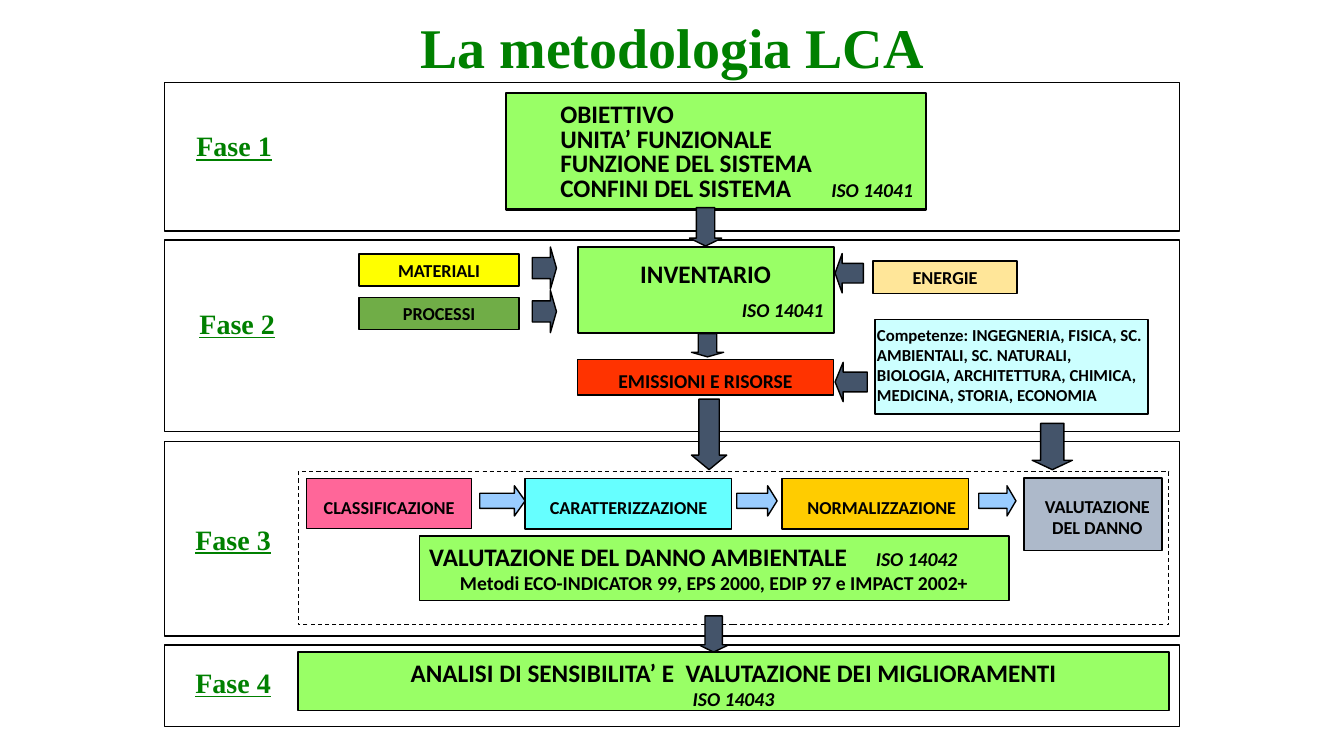
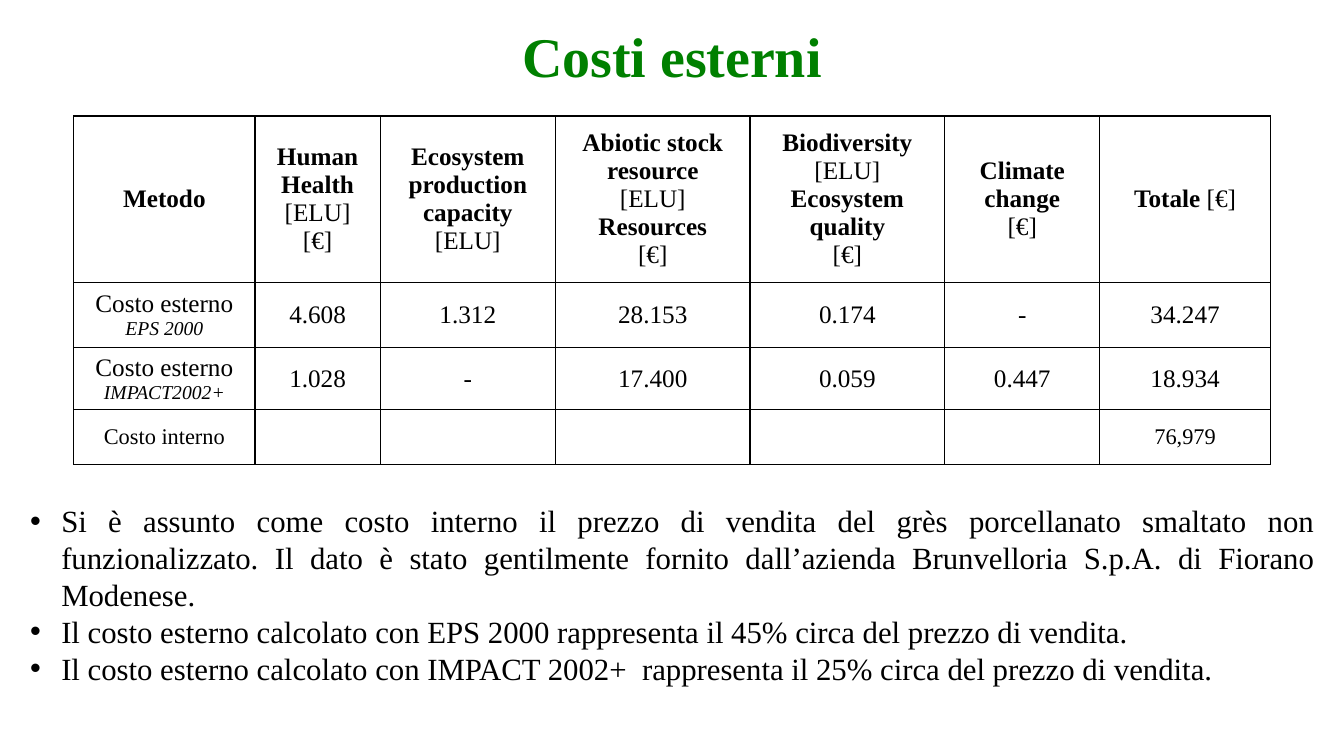
from lxml import etree
from pptx import Presentation
from pptx.dml.color import RGBColor
from pptx.enum import dml, shapes, text
from pptx.oxml import ns
from pptx.util import Pt

SERIF, SANS = "Times New Roman", "Calibri"
GREEN, LIME, SLATE, SKY, BLACK, WHITE = "008000", "99FF66", "44546A", "99CCFF", "000000", "FFFFFF"
ALIGN = {"l": text.PP_ALIGN.LEFT, "c": text.PP_ALIGN.CENTER,
         "r": text.PP_ALIGN.RIGHT, "j": text.PP_ALIGN.JUSTIFY}
KIND = shapes.MSO_SHAPE
TOP, MIDDLE = text.MSO_ANCHOR.TOP, text.MSO_ANCHOR.MIDDLE
colour = RGBColor.from_string


def write(frame, paragraphs, font, hex_colour=BLACK, before=0, spacing=None):
    """Each paragraph is (alignment, [(text, size, style letters from b, i, u)])."""
    frame.word_wrap = True
    for index, (align, runs) in enumerate(paragraphs):
        paragraph = frame.add_paragraph() if index else frame.paragraphs[0]
        paragraph.alignment = ALIGN[align]
        paragraph.space_before = Pt(before if index else 0)
        if spacing:
            paragraph.line_spacing = spacing
        for words, size, style in runs:
            run = paragraph.add_run()
            run.text = words
            run.font.name, run.font.size = font, Pt(size)
            run.font.bold, run.font.italic = "b" in style, "i" in style
            run.font.underline = "u" in style
            run.font.color.rgb = colour(hex_colour)


def draw(slide, kind, place, fill, line_width=1.0):
    shape = slide.shapes.add_shape(kind, *[Pt(length) for length in place])
    shape.shadow.inherit = False
    if fill:
        shape.fill.solid()
        shape.fill.fore_color.rgb = colour(fill)
    else:
        shape.fill.background()
    shape.line.color.rgb = colour(BLACK)
    shape.line.width = Pt(line_width)
    return shape


presentation = Presentation()
presentation.slide_width, presentation.slide_height = Pt(960), Pt(540)

# Slides and their titles
slides = []
for title, place in (("La metodologia LCA", (88.5, 5.8, 783, 61)),
                     ("Costi esterni", (66, 14.4, 828, 55.4))):
    slide = presentation.slides.add_slide(presentation.slide_layouts[6])
    frame = slide.shapes.add_textbox(*[Pt(length) for length in place]).text_frame
    frame.vertical_anchor = MIDDLE
    write(frame, [("c", [(title, 40, "b")])], SERIF, GREEN, spacing=0.9)
    slides.append(slide)
method_slide, cost_slide = slides

# Slide 1: phase frames and labels
phases = [(59, 106, 133.2, 88.6), (171.4, 136.8, 135.4, 215.3),
          (315.4, 139, 132.5, 369.4), (460.8, 58.3, 132.5, 471.6)]
for number, (top, height, label_left, label_top) in enumerate(phases, 1):
    draw(method_slide, KIND.RECTANGLE, (117.4, top, 725, height), WHITE)
    label = method_slide.shapes.add_textbox(Pt(label_left), Pt(label_top), Pt(80), Pt(31.7))
    write(label.text_frame, [("l", [(f"Fase {number}", 20, "bu")])], SERIF, GREEN)

assessment = draw(method_slide, KIND.RECTANGLE, (213, 337, 622, 109.4), None, 0.75)
assessment.line.dash_style = dml.MSO_LINE.DASH

# Slide 1: boxes as place, fill, line width, insets, anchor, space before, line spacing,
# tab stop, paragraphs
PLAIN, STEP = (7.2, 3.6, 7.2, 3.6), (1.4, 12.2, 1.4, 3.6)
SHIFTED = (7.4, 12.2, 1.4, 3.6)
boxes = [
    ((361.4, 66.2, 300.2, 83.5), LIME, 1.5, (38.9, 15, 1.4, 3.6), TOP, 9, 0.4, 193.6,
     [("l", [("OBIETTIVO", 18, "b")]),
      ("l", [("UNITA’ FUNZIONALE", 18, "b")]),
      ("l", [("FUNZIONE DEL SISTEMA", 18, "b")]),
      ("l", [("CONFINI DEL SISTEMA\t", 18, "b"), ("ISO 14041", 14, "bi")])]),
    ((412.6, 176.4, 182.9, 61.2), LIME, 1.5, PLAIN, MIDDLE, 7, None, None,
     [("c", [("INVENTARIO", 18, "b")]), ("r", [("ISO 14041", 14, "bi")])]),
    ((412.6, 257, 182.9, 25.2), "FF3300", 1, (7.2, 6.5, 7.2, 3.6), TOP, 0, None, None,
     [("c", [("EMISSIONI E RISORSE", 14, "b")])]),
    ((256.3, 181.4, 114.5, 23), "FFFF00", 1, PLAIN, TOP, 0, None, None,
     [("c", [("MATERIALI", 13, "b")])]),
    ((256.3, 212.4, 114.5, 23), "70AD47", 1, PLAIN, TOP, 0, None, None,
     [("c", [("PROCESSI", 13, "b")])]),
    ((623.5, 186.5, 103, 23), "FFE699", 1, PLAIN, TOP, 0, None, None,
     [("c", [("ENERGIE", 13, "b")])]),
    ((625, 228.2, 195.1, 67.7), "CCFFFF", 1, (1.4, 3.6, 1.4, 0.7), TOP, 0, None, None,
     [("l", [("Competenze: INGEGNERIA, FISICA, SC. AMBIENTALI, SC. NATURALI, BIOLOGIA, "
              "ARCHITETTURA, CHIMICA, MEDICINA, STORIA, ECONOMIA", 12, "b")])]),
    ((218.9, 342, 118, 35.6), "FF6699", 1, STEP, TOP, 0, None, None,
     [("c", [("CLASSIFICAZIONE", 13, "b")])]),
    ((375.1, 342, 147.6, 36), "66FFFF", 1, STEP, TOP, 0, None, None,
     [("c", [("CARATTERIZZAZIONE", 13, "b")])]),
    ((558.7, 342, 133.2, 36), "FFCC00", 1, (10.3, 12.2, 1.4, 3.6), TOP, 0, None, None,
     [("c", [("NORMALIZZAZIONE", 13, "b")])]),
    ((731.5, 341.3, 98.6, 51.8), "ADB9CA", 1, SHIFTED, TOP, 0, None, None,
     [("c", [("VALUTAZIONE", 13, "b")]), ("c", [("DEL DANNO", 13, "b")])]),
    ((299.5, 383, 421.2, 46.1), LIME, 1, PLAIN, TOP, 0, None, 319,
     [("l", [("VALUTAZIONE DEL DANNO AMBIENTALE\t", 18, "b"), ("ISO 14042", 14, "bi")]),
      ("c", [("Metodi ECO-INDICATOR 99, EPS 2000, EDIP 97 e IMPACT 2002+", 14, "b")])]),
    ((213, 465.8, 622, 41.8), LIME, 1, PLAIN, TOP, 0, None, None,
     [("c", [("ANALISI DI SENSIBILITA’ E  VALUTAZIONE DEI MIGLIORAMENTI", 18, "b")]),
      ("c", [("ISO 14043", 14, "bi")])]),
]
for place, fill, width, insets, anchor, before, spacing, tab_stop, paragraphs in boxes:
    frame = draw(method_slide, KIND.RECTANGLE, place, fill, width).text_frame
    frame.margin_left, frame.margin_top, frame.margin_right, frame.margin_bottom = map(Pt, insets)
    frame.vertical_anchor = anchor
    write(frame, paragraphs, SANS, before=before, spacing=spacing)
    if tab_stop:
        for paragraph in frame.paragraphs:
            if "\t" in paragraph.text:
                tabs = etree.SubElement(paragraph._p.get_or_add_pPr(), ns.qn("a:tabLst"))
                etree.SubElement(tabs, ns.qn("a:tab"), pos=str(Pt(tab_stop)), algn="l")

# Slide 1: arrows as kind, place, fill, shaft and head proportions
DOWN, LEFT, RIGHT = KIND.DOWN_ARROW, KIND.LEFT_ARROW, KIND.RIGHT_ARROW
arrows = [
    (DOWN, (492.5, 148.3, 23, 27.4), SLATE, 0.575, 0.244),
    (DOWN, (493.9, 238.3, 23, 16.6), SLATE, 0.575, 0.195),
    (DOWN, (493.9, 285.1, 25.2, 50.4), SLATE, 0.575, 0.412),
    (DOWN, (737.3, 302.4, 28.8, 33.1), SLATE, 0.575, 0.234),
    (DOWN, (499, 439.9, 21.6, 25.9), SLATE, 0.575, 0.242),
    (RIGHT, (380.2, 176.4, 17.3, 30.2), SLATE, 0.5, 0.25),
    (RIGHT, (380.2, 207.4, 17.3, 30.2), SLATE, 0.5, 0.25),
    (LEFT, (596.5, 181.1, 20.2, 28.1), SLATE, 0.5, 0.25),
    (LEFT, (596.5, 258.8, 23, 28.1), SLATE, 0.5, 0.25),
    (RIGHT, (342.7, 347, 32.4, 21.6), SKY, 0.5, 0.355),
    (RIGHT, (526.3, 347, 28.8, 21.6), SKY, 0.5, 0.312),
    (RIGHT, (699.1, 347, 26.6, 21.6), SKY, 0.5, 0.294),
]
for kind, place, fill, shaft, head in arrows:
    arrow = draw(method_slide, kind, place, fill)
    arrow.adjustments[0], arrow.adjustments[1] = shaft, head

# Slide 2: cost table; a header line is (text, style)
headers = [
    [[("Metodo", "b")]],
    [[("Human Health", "b")], [("[ELU]", "")], [("[€]", "")]],
    [[("Ecosystem production capacity ", "b"), ("[ELU]", "")]],
    [[("Abiotic stock resource", "b")], [("[ELU]", "")], [("Resources", "b")], [("[€]", "")]],
    [[("Biodiversity", "b")], [("[ELU]", "")], [("Ecosystem quality", "b")], [("[€]", "")]],
    [[("Climate change", "b")], [("[€]", "")]],
    [[("Totale", "b"), (" [€]", "")]],
]
rows = [[[("c", [(words, 18, style) for words, style in line]) for line in cell]
         for cell in headers]]
for method, values in (("EPS 2000", "4.608 1.312 28.153 0.174 - 34.247"),
                       ("IMPACT2002+", "1.028 - 17.400 0.059 0.447 18.934")):
    rows.append([[("c", [("Costo esterno", 18, "")]), ("c", [(method, 14, "i")])]]
                + [[("c", [(value, 18, "")])] for value in values.split()])
rows.append([[("c", [("Costo interno", 16, "")])]] + [[]] * 5 + [[("c", [("76,979", 16, "")])]])

column_widths = [129.6, 89.3, 125.3, 139, 139, 110.9, 121.7]
row_heights = [118.8, 46.8, 43.9, 39.6]
table = cost_slide.shapes.add_table(len(rows), len(column_widths), Pt(52.6), Pt(82.8),
                                    Pt(sum(column_widths)), Pt(sum(row_heights))).table
table.first_row = table.horz_banding = False
for column, width in zip(table.columns, column_widths):
    column.width = Pt(width)
for row, height, contents in zip(table.rows, row_heights, rows):
    row.height = Pt(height)
    for cell, paragraphs in zip(row.cells, contents):
        cell.margin_left = cell.margin_right = Pt(5)
        cell.margin_top = cell.margin_bottom = Pt(0)
        cell.vertical_anchor = MIDDLE
        write(cell.text_frame, paragraphs, SERIF)
        properties = cell._tc.get_or_add_tcPr()
        for side in ("lnL", "lnR", "lnT", "lnB"):
            border = etree.SubElement(properties, ns.qn(f"a:{side}"), w=str(Pt(1)))
            solid = etree.SubElement(border, ns.qn("a:solidFill"))
            etree.SubElement(solid, ns.qn("a:srgbClr"), val=BLACK)
        cell.fill.background()

# Slide 2: bulleted remarks
remarks = [
    "Si è assunto come costo interno il prezzo di vendita del grès porcellanato smaltato non "
    "funzionalizzato. Il dato è stato gentilmente fornito dall’azienda Brunvelloria S.p.A. di "
    "Fiorano Modenese.",
    "Il costo esterno calcolato con EPS 2000 rappresenta il 45% circa del prezzo di vendita.",
    "Il costo esterno calcolato con IMPACT 2002+  rappresenta il 25% circa del prezzo di vendita.",
]
frame = cost_slide.shapes.add_textbox(Pt(14.4), Pt(355), Pt(931.7), Pt(134.6)).text_frame
write(frame, [("j", [(remark, 22, "")]) for remark in remarks], SERIF)
for paragraph in frame.paragraphs:
    properties = paragraph._p.get_or_add_pPr()
    properties.set("marL", str(Pt(22.3)))
    properties.set("indent", str(-Pt(22.3)))
    etree.SubElement(properties, ns.qn("a:buFont"), typeface="Arial")
    etree.SubElement(properties, ns.qn("a:buChar"), char="•")

presentation.save("out.pptx")
